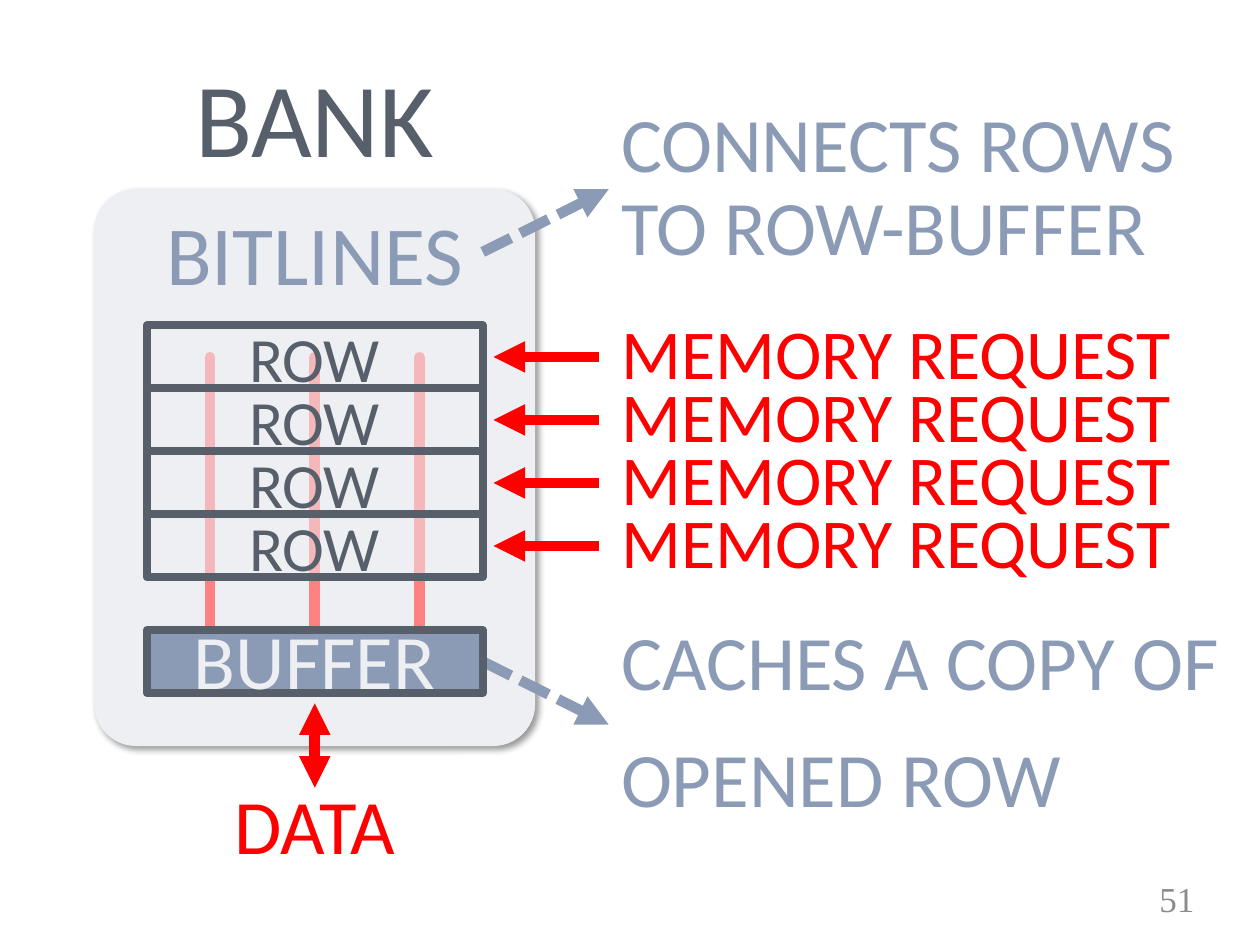
import dataclasses

import pptx
import pptx.dml.color
import pptx.enum.dml
import pptx.enum.shapes
import pptx.enum.text
import pptx.oxml
import pptx.oxml.ns
import pptx.util

Cm = pptx.util.Cm
ALIGN = pptx.enum.text.PP_ALIGN
SHAPE = pptx.enum.shapes.MSO_SHAPE
NAMESPACE = pptx.oxml.ns.nsdecls("a")


@dataclasses.dataclass(frozen=True)
class Theme:
    panel: str = "EDEFF3"
    slate: str = "565F6A"
    blue: str = "8B9BB5"
    pink: str = "FF8181"
    red: str = "FF0000"
    grey: str = "8C8C8C"
    font: str = "Calibri"
    number_font: str = "Times New Roman"
    title: int = 60
    heading: int = 48
    body: int = 44
    request: int = 40
    row: int = 36
    number: int = 20
    thick: float = 6
    outline: float = 4.5


@dataclasses.dataclass(frozen=True)
class Box:
    """A rectangle in centimetres."""
    left: float
    top: float
    width: float
    height: float

    def inner(self, left, top, width, height):
        """Return a box placed relative to this one."""
        return Box(self.left + left, self.top + top, width, height)

    @property
    def lengths(self):
        return [Cm(value) for value in (self.left, self.top, self.width, self.height)]


THEME = Theme()
ROW_COUNT, ROW_HEIGHT = 4, 1.27


def color(value):
    return pptx.dml.color.RGBColor.from_string(value)


def set_attributes(target, values):
    for name, value in values.items():
        setattr(target, name, value)


def write(shape, text, size, ink, align=ALIGN.CENTER, spacing=None, font=THEME.font):
    """Put one formatted paragraph into a shape; a vertical tab breaks the line."""
    frame = shape.text_frame
    set_attributes(frame, {"word_wrap": True,
                           "vertical_anchor": pptx.enum.text.MSO_ANCHOR.MIDDLE})
    paragraph = frame.paragraphs[0]
    paragraph.text = text
    set_attributes(paragraph, {"alignment": align, "line_spacing": spacing})
    for run in paragraph.runs:
        set_attributes(run.font, {"name": font, "size": pptx.util.Pt(size)})
        run.font.color.rgb = color(ink)


def add_text(shapes, box, *text, **options):
    shape = shapes.add_textbox(*box.lengths)
    write(shape, *text, **options)
    return shape


def add_block(shapes, kind, box, fill, outline=None):
    shape = shapes.add_shape(kind, *box.lengths)
    shape.shadow.inherit = False
    shape.fill.solid()
    shape.fill.fore_color.rgb = color(fill)
    if outline:
        shape.line.color.rgb = color(outline)
        shape.line.width = pptx.util.Pt(THEME.outline)
    else:
        shape.line.fill.background()
    return shape


def add_line(shapes, start, end, ink, dotted=False, round_cap=False, heads=()):
    """Draw a thick line; heads names the ends (headEnd, tailEnd) with arrowheads."""
    connector = shapes.add_connector(pptx.enum.shapes.MSO_CONNECTOR.STRAIGHT,
                                     *[Cm(value) for value in (*start, *end)])
    connector.line.color.rgb = color(ink)
    connector.line.width = pptx.util.Pt(THEME.thick)
    if dotted:
        connector.line.dash_style = pptx.enum.dml.MSO_LINE.ROUND_DOT
        connector.line.dash_style = pptx.enum.dml.MSO_LINE.SQUARE_DOT
    line = connector.line._get_or_add_ln()
    if round_cap:
        line.set("cap", "rnd")
    for head in heads:
        line.append(pptx.oxml.parse_xml(f'<a:{head} {NAMESPACE} type="triangle"/>'))
    connector._element.spPr.append(pptx.oxml.parse_xml(f"<a:effectLst {NAMESPACE}/>"))
    return connector


def add_panel(shapes, box):
    panel = add_block(shapes, SHAPE.ROUNDED_RECTANGLE, box, THEME.panel)
    panel.adjustments[0] = 0.095
    effects = panel._element.spPr.find(pptx.oxml.ns.qn("a:effectLst"))
    effects.append(pptx.oxml.parse_xml(
        f'<a:outerShdw {NAMESPACE} blurRad="50800" dist="38100" dir="2700000" algn="tl">'
        '<a:srgbClr val="000000"><a:alpha val="40000"/></a:srgbClr></a:outerShdw>'))


def add_bitlines(shapes, box):
    """Draw three evenly spaced bitlines and return the middle one."""
    lines = []
    for index in range(3):
        x = box.left + index * box.width / 2
        lines.append(add_line(shapes, (x, box.top), (x, box.top + box.height),
                              THEME.pink, round_cap=True))
    return lines[1]


def add_rows(shapes, box):
    """Stack translucent rows, the lowest one at the back."""
    for index in reversed(range(ROW_COUNT)):
        row = add_block(shapes, SHAPE.RECTANGLE,
                        box.inner(0, index * ROW_HEIGHT, box.width, ROW_HEIGHT),
                        THEME.panel, THEME.slate)
        fill = row._element.spPr.find(pptx.oxml.ns.qn("a:solidFill"))
        fill[0].append(pptx.oxml.parse_xml(f'<a:alpha {NAMESPACE} val="50000"/>'))
        write(row, "ROW", THEME.row, THEME.slate)


def add_note(shapes, box, text, start):
    """Write a note and point a dotted arrow at the middle of its left side."""
    note = add_text(shapes, box, text, THEME.body, THEME.blue,
                    align=ALIGN.LEFT, spacing=0.9)
    arrow = add_line(shapes, start, (box.left, box.top + box.height / 2),
                     THEME.blue, dotted=True, heads=["tailEnd"])
    arrow.end_connect(note, 1)
    return arrow


def add_buffer(shapes, box):
    buffer = add_block(shapes, SHAPE.RECTANGLE, box, THEME.blue, THEME.slate)
    buffer.text_frame.margin_bottom = Cm(0.25)
    write(buffer, "BUFFER", THEME.body, THEME.panel)
    return buffer


def add_bank(shapes, box):
    """Draw the bank with its rows, buffer, notes and data output."""
    add_panel(shapes, box)
    add_text(shapes, box.inner(-0.21, -2.75, 9.31, 2.54), "BANK", THEME.title, THEME.slate)
    middle_bitline = add_bitlines(shapes, box.inner(2.33, 3.39, 4.23, 5.5))
    add_text(shapes, box.inner(0, 0, box.width, 2.54), "BITLINES", THEME.heading, THEME.blue)
    add_rows(shapes, box.inner(1.06, 2.75, 6.77, ROW_COUNT * ROW_HEIGHT))
    right = box.left + 7.83
    buffer_arrow = add_note(shapes, box.inner(10.37, 9.1, 12.7, 3.39),
                            "CACHES A COPY OF \vOPENED ROW", (right, box.top + 9.53))
    add_note(shapes, box.inner(10.37, -1.69, 12.7, 3.39),
             "CONNECTS ROWS TO ROW-BUFFER", (right, box.top + 1.27))
    buffer = add_buffer(shapes, box.inner(1.06, 8.89, 6.77, 1.27))
    buffer_arrow.begin_connect(buffer, 3)
    middle_bitline.end_connect(buffer, 0)
    center = box.left + box.width / 2
    arrow = add_line(shapes, (center, box.top + 12.07), (center, box.top + 10.37),
                     THEME.red, heads=["headEnd", "tailEnd"])
    data = add_text(shapes, box.inner(2.33, 12.07, 4.23, 1.69), "DATA",
                    THEME.body, THEME.red, spacing=0.9)
    arrow.begin_connect(data, 0)


def add_requests(shapes, box):
    """Send one memory request to each row."""
    for index in range(ROW_COUNT):
        line = box.inner(2.33, index * ROW_HEIGHT, 11.85, 1.69)
        y = line.top + line.height / 2
        add_line(shapes, (box.left + 2.12, y), (box.left, y), THEME.red, heads=["tailEnd"])
        add_text(shapes, line, "MEMORY REQUEST", THEME.request, THEME.red,
                 align=ALIGN.LEFT, spacing=0.9)


def main():
    presentation = pptx.Presentation()
    set_attributes(presentation, {"slide_width": Cm(25.4), "slide_height": Cm(19.05)})
    shapes = presentation.slides.add_slide(presentation.slide_layouts[6]).shapes
    add_bank(shapes, Box(1.9, 3.81, 8.89, 11.23))
    add_requests(shapes, Box(9.95, 6.35, 14.18, 5.5))
    add_text(shapes, Box(22.43, 17.6, 1.9, 1.02), "51", THEME.number, THEME.grey,
             align=ALIGN.RIGHT, font=THEME.number_font)
    presentation.save("out.pptx")


if __name__ == "__main__":
    main()
